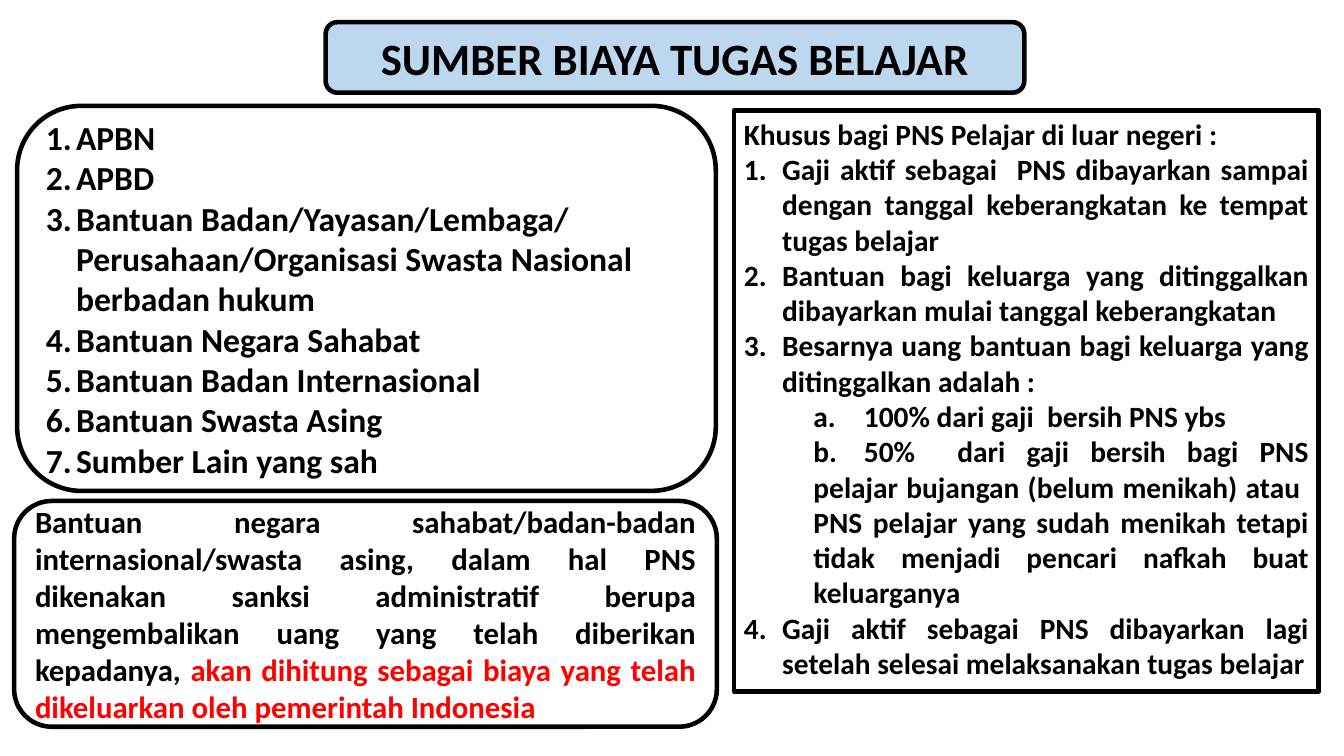
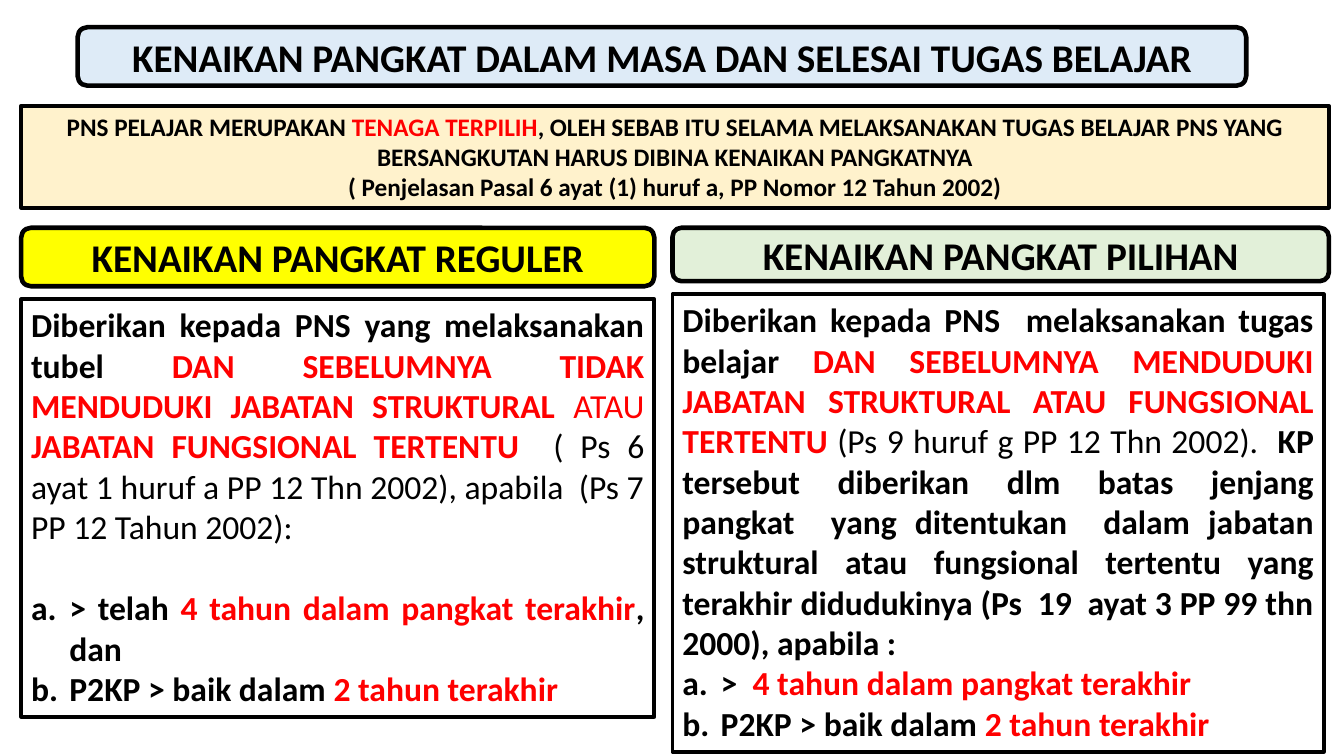
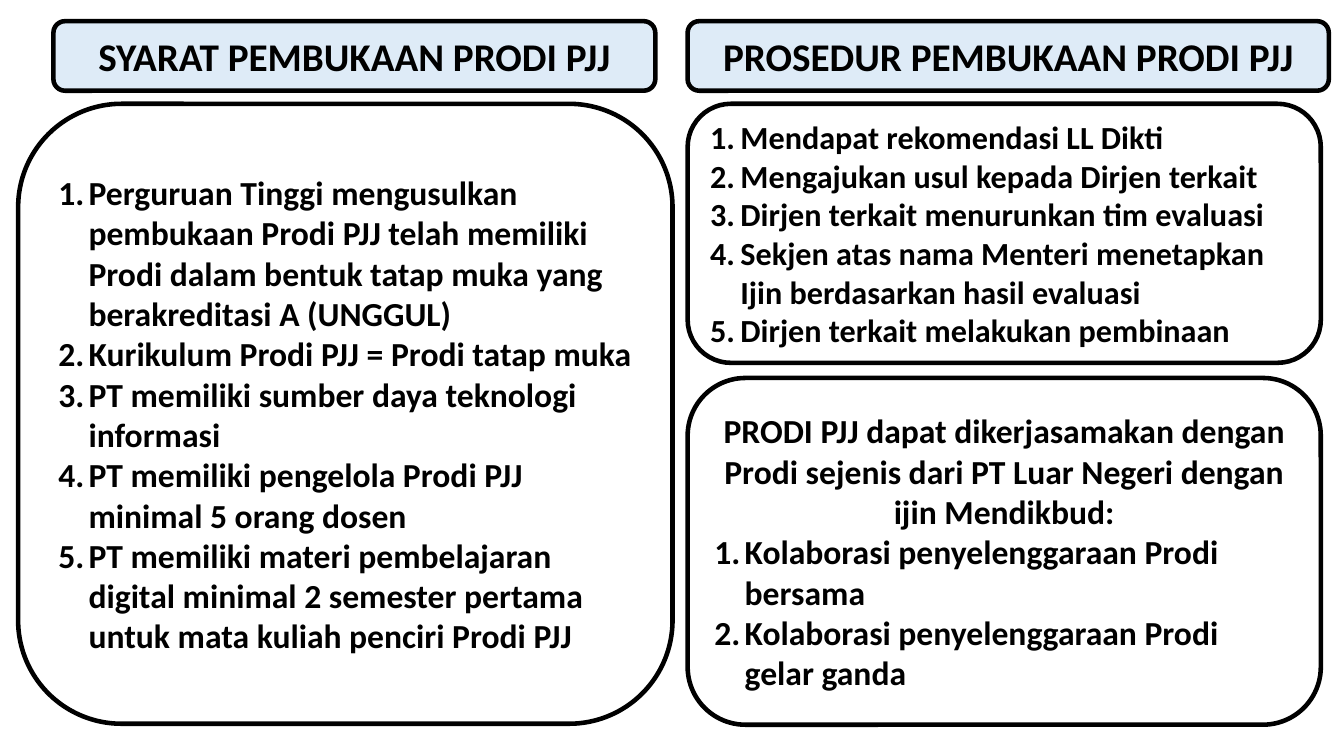
from dataclasses import dataclass

from lxml import etree
from pptx import Presentation
from pptx import util as u
from pptx.dml.color import RGBColor
from pptx.enum import shapes, text
from pptx.oxml.ns import qn

# Colours and shared style
BLACK = RGBColor(0x00, 0x00, 0x00)
RED = RGBColor(0xFF, 0x00, 0x00)
BLUE = RGBColor(0xBD, 0xD7, 0xEE)
PALE = RGBColor(0xDE, 0xEB, 0xF7)
CREAM = RGBColor(0xFF, 0xF2, 0xCC)
GREEN = RGBColor(0xE2, 0xF0, 0xD9)
YELLOW = RGBColor(0xFF, 0xFF, 0x00)

FONT = "Calibri"
ROUND = shapes.MSO_SHAPE.ROUNDED_RECTANGLE
RECT = shapes.MSO_SHAPE.RECTANGLE
LEFT, MID, JUST = (text.PP_ALIGN.LEFT, text.PP_ALIGN.CENTER,
                   text.PP_ALIGN.JUSTIFY)
DIGIT, ALPHA = "arabicPeriod", "alphaLcPeriod"

# Text frame settings for each kind of outline
FRAMES = {
    ROUND: {"word_wrap": True, "auto_size": text.MSO_AUTO_SIZE.NONE,
            "vertical_anchor": text.MSO_ANCHOR.MIDDLE},
    RECT: {"word_wrap": True,
           "auto_size": text.MSO_AUTO_SIZE.SHAPE_TO_FIT_TEXT,
           "vertical_anchor": text.MSO_ANCHOR.TOP},
}


@dataclass
class Run:
    text: str
    color: RGBColor = BLACK
    bold: bool = True


@dataclass
class Para:
    runs: list[Run]
    align: text.PP_ALIGN = LEFT
    mark: str = ""
    start: int = 1
    indent: float = 0
    hang: float = 0
    before: float = 0


@dataclass
class Box:
    at: tuple[float, float, float, float]
    paras: list[Para]
    size: int = 24
    kind: shapes.MSO_SHAPE = ROUND
    fill: RGBColor | None = None
    line: float = 3.25


def para(*runs: str | Run, **style) -> Para:
    """Plain strings become bold black runs."""
    return Para([Run(r) if isinstance(r, str) else r for r in runs], **style)


def item(*runs: str | Run, align=JUST, mark=DIGIT, indent=0.38, **style) -> Para:
    return para(*runs, align=align, mark=mark, indent=indent, hang=indent, **style)


def listing(*lines: str) -> list[Para]:
    return [item(line, align=LEFT, indent=0.3) for line in lines]


def title(at: tuple[float, float, float, float], words: str,
          fill: RGBColor = PALE, size: int = 28) -> Box:
    return Box(at, [para(words, align=MID)], size, fill=fill)


def write(p, data: Para, size: int) -> None:
    p.alignment = data.align
    if data.before:
        p.space_before = u.Pt(data.before)
    props = p._p.get_or_add_pPr()
    if data.indent:
        props.set("marL", str(u.Inches(data.indent)))
        props.set("indent", str(u.Inches(-data.hang)))
    if data.mark:
        mark = etree.SubElement(props, qn("a:buAutoNum"), type=data.mark)
        if data.start > 1:
            mark.set("startAt", str(data.start))
    for part in data.runs:
        run = p.add_run()
        run.text = part.text
        look = {"name": FONT, "size": u.Pt(size), "bold": part.bold}
        for key, value in look.items():
            setattr(run.font, key, value)
        run.font.color.rgb = part.color


def draw(slide, box: Box) -> None:
    shape = slide.shapes.add_shape(box.kind, *map(u.Inches, box.at))
    shape.shadow.inherit = False
    if box.fill is None:
        shape.fill.background()
    else:
        shape.fill.solid()
        shape.fill.fore_color.rgb = box.fill
    shape.line.color.rgb = BLACK
    shape.line.width = u.Pt(box.line)
    frame = shape.text_frame
    for key, value in FRAMES[box.kind].items():
        setattr(frame, key, value)
    for i, data in enumerate(box.paras):
        write(frame.add_paragraph() if i else frame.paragraphs[0], data, box.size)


# Slide 1: sources of funding
FUNDS = [
    Box((0.17, 1.05, 6.93, 3.82), listing(
        "APBN",
        "APBD",
        "Bantuan Badan/Yayasan/Lembaga/ Perusahaan/Organisasi Swasta Nasional "
        "berbadan hukum",
        "Bantuan Negara Sahabat",
        "Bantuan Badan Internasional",
        "Bantuan Swasta Asing",
        "Sumber Lain yang sah")),
    Box((0.14, 4.97, 6.97, 2.24), [para(
        "Bantuan negara sahabat/badan-badan internasional/swasta asing, dalam hal "
        "PNS dikenakan sanksi administratif berupa mengembalikan uang yang telah "
        "diberikan kepadanya, ",
        Run("akan dihitung sebagai biaya yang telah dikeluarkan oleh pemerintah "
            "Indonesia", RED), align=JUST)], 22),
    title((3.23, 0.22, 6.93, 0.7), "SUMBER BIAYA TUGAS BELAJAR", BLUE, 32),
    Box((7.28, 1.1, 5.8, 5.76), [
        para("Khusus bagi PNS Pelajar di luar negeri :"),
        item("Gaji aktif sebagai  PNS dibayarkan sampai dengan tanggal "
             "keberangkatan ke tempat tugas belajar"),
        item("Bantuan bagi keluarga yang ditinggalkan dibayarkan mulai tanggal "
             "keberangkatan"),
        item("Besarnya uang bantuan bagi keluarga yang ditinggalkan adalah :"),
        para("a.\t100% dari gaji  bersih PNS ybs", align=JUST, indent=0.69),
        para("b.\t50%  dari gaji bersih bagi PNS pelajar bujangan (belum menikah) "
             "atau  PNS pelajar yang sudah menikah tetapi tidak menjadi pencari "
             "nafkah buat keluarganya", align=JUST, indent=0.69),
        item("Gaji aktif sebagai PNS dibayarkan lagi setelah selesai melaksanakan "
             "tugas belajar", start=4),
    ], 21, RECT, line=3.5),
]

# Slide 2: promotion during and after study
LAST = item("P2KP > baik dalam ", Run("2 tahun terakhir", RED), mark=ALPHA)
FOUR = Run("4 tahun dalam pangkat terakhir", RED)
RANKS = [
    Box((0.21, 1.05, 12.97, 1.01), [
        para("PNS PELAJAR MERUPAKAN ", Run("TENAGA TERPILIH", RED),
             ", OLEH SEBAB ITU SELAMA MELAKSANAKAN TUGAS BELAJAR PNS YANG "
             "BERSANGKUTAN HARUS DIBINA KENAIKAN PANGKATNYA", align=MID),
        para("( Penjelasan Pasal 6 ayat (1) huruf a, PP Nomor 12 Tahun 2002)",
             align=MID),
    ], 18, RECT, CREAM, 2.75),
    Box((0.21, 2.97, 6.28, 4.14), [
        para("Diberikan kepada PNS yang melaksanakan tubel ",
             Run("DAN SEBELUMNYA TIDAK MENDUDUKI JABATAN STRUKTURAL", RED),
             Run(" ATAU ", RED, False),
             Run("JABATAN FUNGSIONAL TERTENTU  ", RED),
             Run("( Ps 6 ayat 1 huruf a PP 12 Thn 2002), apabila  (Ps 7 PP 12 "
                 "Tahun 2002):", bold=False), align=JUST),
        item("> telah ", FOUR, ", dan", mark=ALPHA, before=29.3),
        LAST,
    ], kind=RECT, line=2.75),
    Box((6.67, 2.92, 6.46, 4.54), [
        para("Diberikan kepada PNS  melaksanakan tugas belajar ",
             Run("DAN SEBELUMNYA MENDUDUKI JABATAN STRUKTURAL ATAU FUNGSIONAL "
                 "TERTENTU ", RED),
             Run("(Ps 9 huruf g PP 12 Thn 2002).  ", bold=False),
             "KP tersebut diberikan dlm batas jenjang pangkat  yang ditentukan  "
             "dalam jabatan struktural atau fungsional tertentu yang terakhir "
             "didudukinya (Ps  19  ayat 3 PP 99 thn 2000), apabila :", align=JUST),
        item(">  ", FOUR, mark=ALPHA),
        LAST,
    ], kind=RECT, line=2.75),
    title((6.67, 2.26, 6.51, 0.53), "KENAIKAN PANGKAT PILIHAN", GREEN),
    title((0.21, 2.26, 6.28, 0.58), "KENAIKAN PANGKAT REGULER", YELLOW),
    title((0.77, 0.27, 11.59, 0.58),
          "KENAIKAN PANGKAT DALAM MASA DAN SELESAI TUGAS BELAJAR"),
]

# Slide 3: opening a distance learning programme
OPENING = [
    Box((6.82, 1.03, 6.28, 2.57), listing(
        "Mendapat rekomendasi LL Dikti",
        "Mengajukan usul kepada Dirjen terkait",
        "Dirjen terkait menurunkan tim evaluasi",
        "Sekjen atas nama Menteri menetapkan Ijin berdasarkan hasil evaluasi",
        "Dirjen terkait melakukan pembinaan"), 23),
    Box((0.18, 1.03, 6.49, 6.15), listing(
        "Perguruan Tinggi mengusulkan pembukaan Prodi PJJ telah memiliki Prodi "
        "dalam bentuk tatap muka yang berakreditasi A (UNGGUL)",
        "Kurikulum Prodi PJJ = Prodi tatap muka",
        "PT memiliki sumber daya teknologi informasi",
        "PT memiliki pengelola Prodi PJJ minimal 5 orang dosen",
        "PT memiliki materi pembelajaran digital minimal 2 semester pertama untuk "
        "mata kuliah penciri Prodi PJJ")),
    Box((6.82, 3.75, 6.28, 3.44), [
        para("PRODI PJJ dapat dikerjasamakan dengan Prodi sejenis dari PT Luar "
             "Negeri dengan ijin Mendikbud:", align=MID),
        *listing("Kolaborasi penyelenggaraan Prodi bersama",
                 "Kolaborasi penyelenggaraan Prodi gelar ganda")]),
    title((0.53, 0.21, 5.97, 0.69), "SYARAT PEMBUKAAN PRODI PJJ"),
    title((6.82, 0.21, 6.36, 0.69), "PROSEDUR PEMBUKAAN PRODI PJJ"),
]


def main() -> None:
    deck = Presentation()
    deck.slide_width, deck.slide_height = u.Inches(13.33), u.Inches(7.5)
    for boxes in (FUNDS, RANKS, OPENING):
        slide = deck.slides.add_slide(deck.slide_layouts[6])
        for box in boxes:
            draw(slide, box)
    deck.save("out.pptx")


if __name__ == "__main__":
    main()
